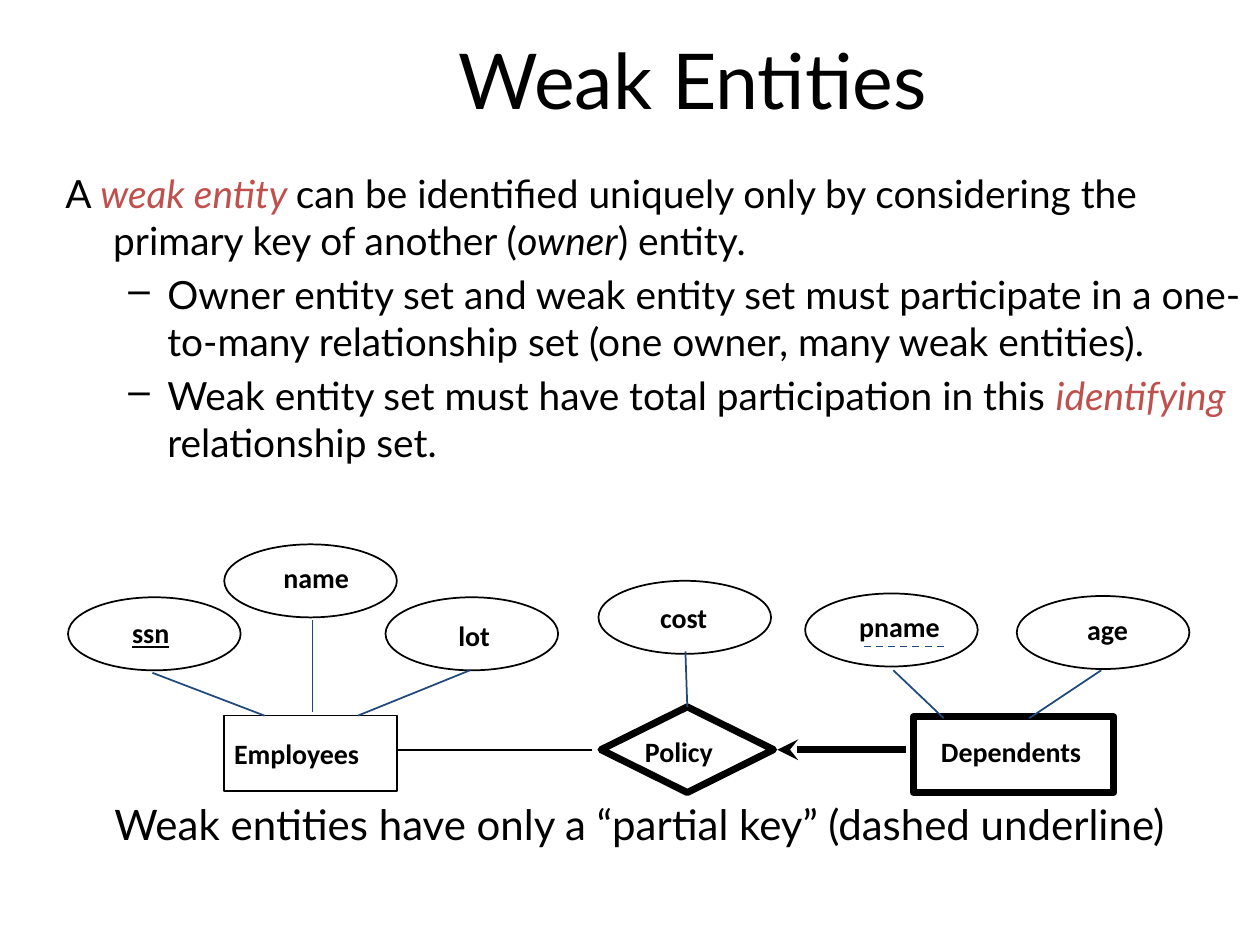
from dataclasses import dataclass
from typing import Optional

from lxml import etree
from pptx import Presentation
from pptx import util as u
from pptx.dml import color
from pptx.enum import dml, shapes, text
from pptx.oxml import ns

COLORS = {"ink": "000000", "accent": "C0504D", "link": "1F497D"}
GRID_COLUMNS, GRID_ROWS = 100, 75
WIDTH, HEIGHT = u.Inches(10), u.Inches(7.5)
OVAL = shapes.MSO_SHAPE.OVAL
RECTANGLE = shapes.MSO_SHAPE.RECTANGLE
DIAMOND = shapes.MSO_SHAPE.DIAMOND
TOP_SITE = 0
LABEL_FORMAT = {"name": "Calibri", "size": u.Pt(16), "bold": True}
BODY_FORMAT = {"name": "Lato", "size": u.Pt(22.2)}


@dataclass(frozen=True)
class Node:
    name: str
    left: float
    top: float
    label_left: float
    label_top: float
    label_width: float
    kind: shapes.MSO_SHAPE = OVAL
    width: float = 13.7
    height: float = 5.8
    weight: float = 1
    underline: bool = False


@dataclass(frozen=True)
class Link:
    start: tuple
    end: tuple
    ink: str = "link"
    weight: float = 1
    dashed: bool = False
    arrow: bool = False
    end_node: Optional[str] = None


NODES = [
    Node("ssn", 5.4, 47.4, 9.5, 48.4, 5.8, underline=True),
    Node("name", 17.8, 43.2, 21.5, 44, 7.8),
    Node("lot", 30.6, 47.4, 35.4, 48.6, 4.7),
    Node("cost", 47.5, 46.1, 51.4, 47.2, 6.5),
    Node("pname", 63.9, 47.1, 67.2, 47.9, 9.1),
    Node("age", 80.7, 47.3, 85.3, 48.1, 5.8),
    Node("Employees", 17.8, 56.8, 17.6, 58, 13.7, RECTANGLE, height=6),
    Node("Policy", 47.7, 56.1, 50.2, 57.8, 8.5, DIAMOND, height=6.8, weight=4),
    Node("Dependents", 72.5, 56.9, 73.7, 57.8, 14.7, RECTANGLE, 15.9, 6, 4),
]

LINKS = [
    Link((74.9, 51.3), (68.2, 51.3), dashed=True),
    Link((24.8, 49.2), (24.8, 56.5)),
    Link((12.1, 53.4), (21, 56.8)),
    Link((37.3, 53.2), (28.4, 56.8)),
    Link((54.4, 51.7), (54.5, 56.1), end_node="Policy"),
    Link((70.9, 53.2), (74.9, 57)),
    Link((87.4, 53.2), (81.7, 57)),
    Link((47, 59.5), (31.5, 59.5), ink="ink"),
    Link((61.7, 59.5), (71.9, 59.5), ink="ink", weight=4, arrow=True),
]

BODY = [
    (0, [("A ", "ink", False), ("weak entity ", "accent", True),
         ("can be identified uniquely only by considering the primary key of another (", "ink", False),
         ("owner", "ink", True), (") entity.", "ink", False)]),
    (1, [("Owner entity set and weak entity set must participate in a one-to-many "
          "relationship set (one owner, many weak entities).", "ink", False)]),
    (1, [("Weak entity set must have total participation in this ", "ink", False),
         ("identifying ", "accent", True), ("relationship set.", "ink", False)]),
]


def across(columns: float) -> int:
    return round(WIDTH * columns / GRID_COLUMNS)


def down(rows: float) -> int:
    return round(HEIGHT * rows / GRID_ROWS)


def area(left: float, top: float, width: float, height: float) -> tuple:
    return across(left), down(top), across(width), down(height)


def rgb(name: str) -> color.RGBColor:
    return color.RGBColor.from_string(COLORS[name])


def apply(target, values: dict) -> None:
    for name, value in values.items():
        setattr(target, name, value)


def add_span(para, words: str, values: dict, ink: str = "ink") -> None:
    span = para.add_run()
    span.text = words
    apply(span.font, values)
    span.font.color.rgb = rgb(ink)


def add_label(page, words: str, place: tuple, values: dict) -> None:
    frame = page.shapes.add_textbox(*area(*place)).text_frame
    apply(frame, {"word_wrap": False, "auto_size": text.MSO_AUTO_SIZE.SHAPE_TO_FIT_TEXT})
    add_span(frame.paragraphs[0], words, values)


def add_title(page) -> None:
    title = page.shapes.title
    left, top, width, height = area(12.5, 0, 85, 12.5)
    apply(title, {"left": left, "top": top, "width": width, "height": height})
    title.text_frame.vertical_anchor = text.MSO_ANCHOR.MIDDLE
    para = title.text_frame.paragraphs[0]
    para.alignment = text.PP_ALIGN.CENTER
    add_span(para, "Weak Entities", {"name": "Lato", "size": u.Pt(44)})


def add_body(page) -> None:
    frame = page.shapes.add_textbox(*area(4.2, 13, 95.8, 25)).text_frame
    frame.word_wrap = True
    for index, (level, spans) in enumerate(BODY):
        para = frame.add_paragraph() if index else frame.paragraphs[0]
        apply(para, {"level": level, "space_before": u.Pt(4.4)})
        margin, indent = ((0.38, -0.38), (0.81, -0.31))[level]
        properties = para._p.get_or_add_pPr()
        properties.set("marL", str(u.Inches(margin)))
        properties.set("indent", str(u.Inches(indent)))
        if level:
            etree.SubElement(properties, ns.qn("a:buChar")).set("char", "–")
        for words, ink, italic in spans:
            add_span(para, words, {**BODY_FORMAT, "italic": italic}, ink)


def add_node(page, node: Node):
    box = page.shapes.add_shape(node.kind, *area(node.left, node.top, node.width, node.height))
    box.shadow.inherit = False
    box.fill.background()
    box.line.color.rgb = rgb("ink")
    box.line.width = u.Pt(node.weight)
    return box


def add_link(page, link: Link, boxes: dict) -> None:
    ends = [measure(value) for point in (link.start, link.end)
            for measure, value in zip((across, down), point)]
    line = page.shapes.add_connector(shapes.MSO_CONNECTOR.STRAIGHT, *ends)
    if link.end_node:
        line.end_connect(boxes[link.end_node], TOP_SITE)
    line.line.color.rgb = rgb(link.ink)
    line.line.width = u.Pt(link.weight)
    if link.dashed:
        line.line.dash_style = dml.MSO_LINE.DASH
    properties = line._element.spPr
    if link.arrow:
        etree.SubElement(properties.find(ns.qn("a:ln")), ns.qn("a:headEnd")).set("type", "stealth")
    etree.SubElement(properties, ns.qn("a:effectLst"))


def main() -> None:
    deck = Presentation()
    apply(deck, {"slide_width": WIDTH, "slide_height": HEIGHT})
    page = deck.slides.add_slide(deck.slide_layouts.get_by_name("Title Only"))
    add_title(page)
    add_body(page)
    boxes = {node.name: add_node(page, node) for node in NODES}
    for node in NODES:
        place = (node.label_left, node.label_top, node.label_width, 3.6)
        add_label(page, node.name, place, {**LABEL_FORMAT, "underline": node.underline})
    for link in LINKS:
        add_link(page, link, boxes)
    add_label(page, "Weak entities have only a “partial key” (dashed underline)",
              (8.1, 62.9, 87.7, 5), {"name": "Lato", "size": u.Pt(24)})
    deck.save("out.pptx")


if __name__ == "__main__":
    main()
